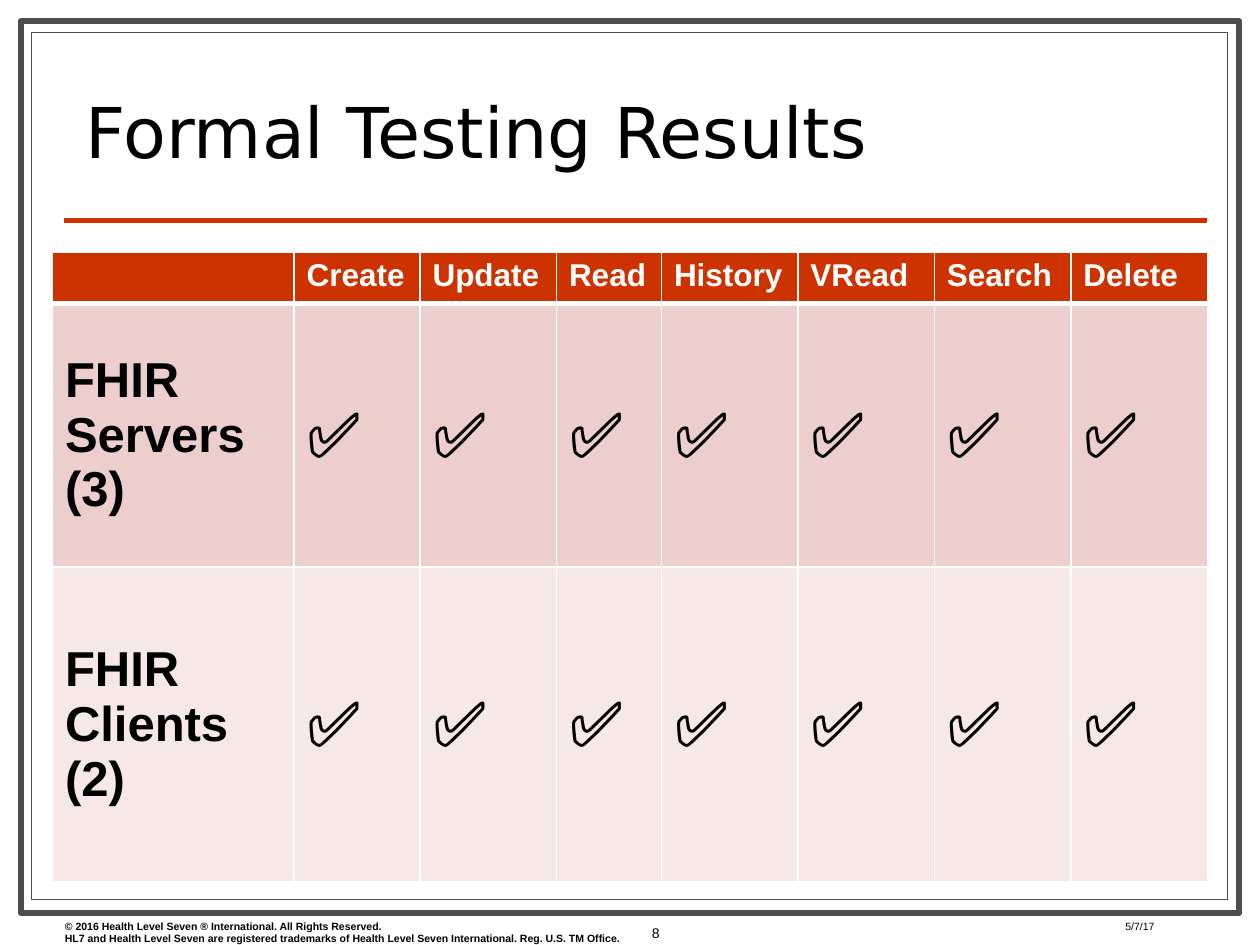
import pptx
import pptx.dml.color
import pptx.enum.shapes
import pptx.enum.text
import pptx.oxml
import pptx.oxml.ns
import pptx.util
from lxml import etree

PX = 7620  # 120 px to the inch
ALIGN = pptx.enum.text.PP_ALIGN
ANCHOR = pptx.enum.text.MSO_ANCHOR


def rgb(value):
    return pptx.dml.color.RGBColor.from_string(value)


def write(frame, text, size, font="Arial", color="000000", bold=False, anchor=ANCHOR.TOP):
    frame.text = text
    frame.word_wrap = True
    frame.vertical_anchor = anchor
    for paragraph in frame.paragraphs:
        for run in paragraph.runs:
            run.font.size = pptx.util.Pt(size)
            run.font.name = font
            run.font.bold = bold
            run.font.color.rgb = rgb(color)


deck = pptx.Presentation()
deck.slide_width = 1200 * PX
deck.slide_height = 900 * PX
slide = deck.slides.add_slide(deck.slide_layouts[6])
shapes = slide.shapes

# Double frame
for left, top, width, height, weight in [(20, 20, 1160, 850, 3.5), (30, 31, 1139, 826, 0.75)]:
    frame = shapes.add_shape(pptx.enum.shapes.MSO_SHAPE.RECTANGLE,
                             left * PX, top * PX, width * PX, height * PX)
    frame.shadow.inherit = False
    frame.fill.solid()
    frame.fill.fore_color.rgb = rgb("FFFFFF")
    frame.line.color.rgb = rgb("4D4D4D")
    frame.line.width = pptx.util.Pt(weight)

# Rule under the title
title_rule = shapes.add_connector(pptx.enum.shapes.MSO_CONNECTOR.STRAIGHT,
                                  61 * PX, 210 * PX, 1150 * PX, 210 * PX)
title_rule.line.color.rgb = rgb("CC3300")
title_rule.line.width = pptx.util.Pt(3)
etree.SubElement(title_rule._element.spPr, pptx.oxml.ns.qn("a:effectLst"))

# Title and footer
title = shapes.add_textbox(70 * PX, 62 * PX, 1070 * PX, 108 * PX).text_frame
write(title, "Formal Testing Results", 40, font="DejaVu Sans", anchor=ANCHOR.BOTTOM)
title.paragraphs[0].line_spacing = 0.8

copyright_lines = shapes.add_textbox(50 * PX, 870 * PX, 580 * PX, 36 * PX).text_frame
write(copyright_lines,
      "© 2016 Health Level Seven ® International. All Rights Reserved.\n"
      "HL7 and Health Level Seven are registered trademarks of Health Level Seven "
      "International. Reg. U.S. TM Office.", 6, bold=True)

date = shapes.add_textbox(1060 * PX, 870 * PX, 110 * PX, 20 * PX).text_frame
write(date, "5/7/17", 6)

page_number = shapes.add_textbox(570 * PX, 858 * PX, 70 * PX, 62 * PX).text_frame
write(page_number, "8", 8, anchor=ANCHOR.MIDDLE)
page_number.paragraphs[0].alignment = ALIGN.RIGHT

# Results table
operations = ["Create", "Update", "Read", "History", "VRead", "Search", "Delete"]
results = [
    ["", *operations],
    ["FHIR Servers\n(3)"] + ["✅"] * len(operations),
    ["FHIR Clients\n(2)"] + ["✅"] * len(operations),
]
column_widths = [230, 120, 130, 100, 130, 130, 130, 130]
row_heights = [49, 251, 300]
row_fills = ["CC3300", "ECCECC", "F6E8E7"]

table = shapes.add_table(len(row_heights), len(column_widths), 50 * PX, 240 * PX,
                         sum(column_widths) * PX, sum(row_heights) * PX).table
for column, width in zip(table.columns, column_widths):
    column.width = width * PX
for row, height in zip(table.rows, row_heights):
    row.height = height * PX

for r, row_texts in enumerate(results):
    for c, text in enumerate(row_texts):
        cell = table.cell(r, c)
        if r == 0:
            write(cell.text_frame, text, 18, color="FFFFFF", bold=True)
        else:
            write(cell.text_frame, text, 28 if c == 0 else 36, bold=c == 0)
            cell.vertical_anchor = ANCHOR.MIDDLE

        # Borders must come before the fill in the cell properties
        weights = {"lnL": 1, "lnR": 1, "lnT": 3 if r == 1 else 1, "lnB": 3 if r == 0 else 1}
        for side, weight in weights.items():
            cell._tc.get_or_add_tcPr().append(pptx.oxml.parse_xml(
                f'<a:{side} {pptx.oxml.ns.nsdecls("a")} w="{pptx.util.Pt(weight)}">'
                f'<a:solidFill><a:srgbClr val="FFFFFF"/></a:solidFill></a:{side}>'))
        cell.fill.solid()
        cell.fill.fore_color.rgb = rgb(row_fills[r])

deck.save("out.pptx")
